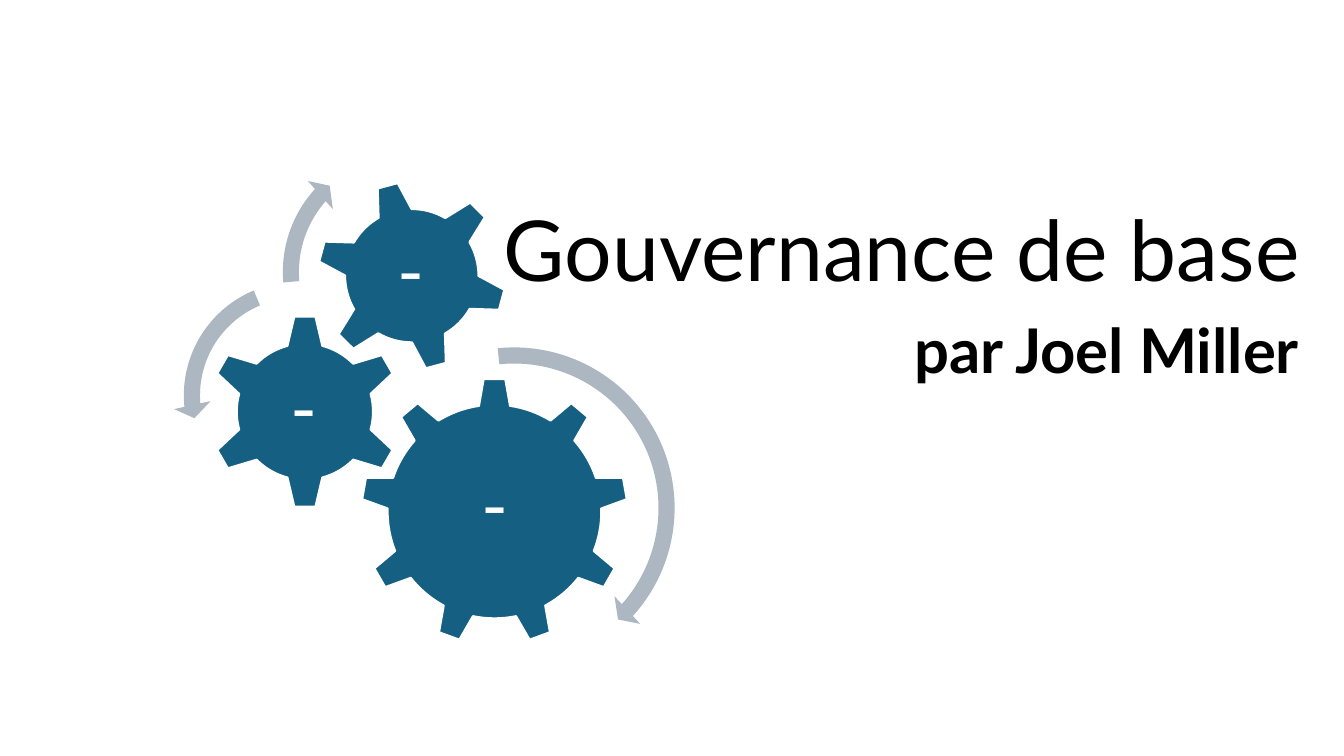
from pptx import Presentation
from pptx.dml.color import RGBColor
from pptx.enum import shapes, text
from pptx.util import Pt

KIND = shapes.MSO_SHAPE
FONT = "Lato"
BLUE, GREY, WHITE, BLACK = "156082", "ACB7C1", "FFFFFF", "000000"

TITLE = ("Gouvernance de base", (215.3, 112.8, 720, 105.2), 60, False)
AUTHOR = ("par Joel Miller", (215.3, 225.4, 720, 80.6), 44, True)
MARK = "-"
GEARS = [
    (KIND.GEAR_9, (257.8, 270, 190.8), 0, (296.6, 314.6, 114.5, 97.9)),
    (KIND.GEAR_6, (148.3, 224.6, 139), 0, (182.9, 259.9, 69.1, 68.4)),
    (KIND.GEAR_6, (226.1, 128.9, 136.1), 345, (255.6, 158.4, 76.3, 76.3)),
]
ARROWS = [
    (KIND.CIRCULAR_ARROW, (244.8, 240.5, 244.8),
     (0.047, 2.99, 25.212, 158.505, 0.055)),
    (KIND.LEFT_CIRCULAR_ARROW, (123.8, 193.7, 177.8),
     (0.065, 4.3, 104.891, 148.378, 0.075)),
    (KIND.CIRCULAR_ARROW, (194.4, 98.6, 191.5),
     (0.06, 3.941, 133.138, 105.082, 0.07)),
]


def paint(hue):
    return RGBColor.from_string(hue)


def points(box):
    return [Pt(n) for n in box]


def write(shape, words, size, hue, align, anchor, bold=False):
    frame = shape.text_frame
    frame.word_wrap = True
    frame.auto_size = text.MSO_AUTO_SIZE.NONE
    frame.vertical_anchor = anchor
    frame.text = words
    para = frame.paragraphs[0]
    para.alignment = align
    para.line_spacing = 0.9
    para.space_before = Pt(0)
    font = para.font
    font.name, font.size, font.bold = FONT, Pt(size), bold
    font.color.rgb = paint(hue)
    return frame


def draw(slide, kind, square, fill):
    left, top, side = square
    shape = slide.shapes.add_shape(kind, *points((left, top, side, side)))
    shape.shadow.inherit = False
    shape.fill.solid()
    shape.fill.fore_color.rgb = paint(fill)
    shape.line.fill.background()
    return shape


def add_gear(slide, kind, square, turn, box):
    gear = draw(slide, kind, square, BLUE)
    gear.rotation = turn
    gear.line.color.rgb = paint(WHITE)
    gear.line.width = Pt(1.5)
    label = slide.shapes.add_textbox(*points(box))
    frame = write(label, MARK, 52, WHITE, text.PP_ALIGN.CENTER,
                  text.MSO_ANCHOR.MIDDLE)
    frame.margin_left = frame.margin_right = Pt(5)
    frame.margin_top = frame.margin_bottom = Pt(5)


def add_arrow(slide, kind, square, bends):
    arrow = draw(slide, kind, square, GREY)
    for i, bend in enumerate(bends):
        arrow.adjustments[i] = bend


def main():
    deck = Presentation()
    deck.slide_width, deck.slide_height = Pt(960), Pt(540)
    slide = deck.slides.add_slide(deck.slide_layouts[5])

    words, box, size, bold = TITLE
    title = slide.shapes.title
    title.left, title.top, title.width, title.height = points(box)
    write(title, words, size, BLACK, text.PP_ALIGN.RIGHT,
          text.MSO_ANCHOR.BOTTOM, bold)

    words, box, size, bold = AUTHOR
    author = slide.shapes.add_textbox(*points(box))
    write(author, words, size, BLACK, text.PP_ALIGN.RIGHT,
          text.MSO_ANCHOR.TOP, bold)

    for gear in GEARS:
        add_gear(slide, *gear)
    for arrow in ARROWS:
        add_arrow(slide, *arrow)
    deck.save("out.pptx")


if __name__ == "__main__":
    main()
